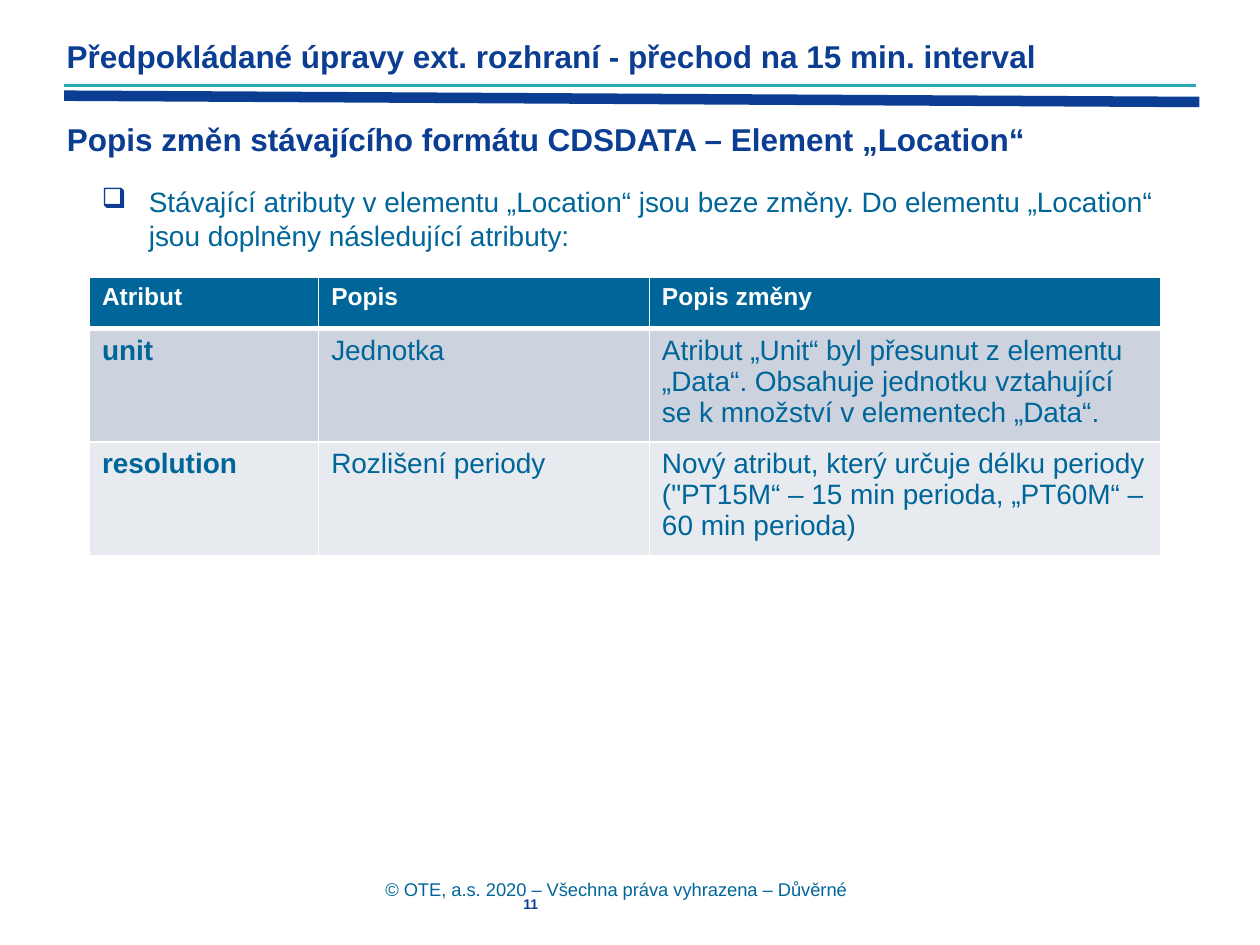
from lxml.etree import SubElement
from pptx import Presentation
from pptx.dml.color import RGBColor
from pptx.enum.shapes import MSO_CONNECTOR as CONNECTOR, MSO_SHAPE as SHAPE
from pptx.enum.text import MSO_ANCHOR as ANCHOR, PP_ALIGN as ALIGN
from pptx.oxml.ns import qn
from pptx.util import Pt

COLORS = {"navy": "0B3D92", "teal": "28ABB7", "blue": "006699", "white": "FFFFFF",
          "dark_band": "CCD3DE", "light_band": "E7EAEF"}
FONT = "Arial"

CHAPTER = "Předpokládané úpravy ext. rozhraní - přechod na 15 min. interval"
TITLE = "Popis změn stávajícího formátu CDSDATA – Element „Location“"
INTRO = ("Stávající atributy v elementu „Location“ jsou beze změny. "
         "Do elementu „Location“ jsou doplněny následující atributy:")
COPYRIGHT = "© OTE, a.s. 2020 – Všechna práva vyhrazena – Důvěrné"
PAGE_NUMBER = "11"
ATTRIBUTES = [
    ("Atribut", "Popis", "Popis změny"),
    ("unit", "Jednotka",
     "Atribut „Unit“ byl přesunut z elementu „Data“. Obsahuje jednotku "
     "vztahující se k množství v elementech „Data“."),
    ("resolution", "Rozlišení periody",
     "Nový atribut, který určuje délku periody "
     "(\"PT15M“ – 15 min perioda, „PT60M“ – 60 min perioda)"),
]
ROW_FILLS = ["blue", "dark_band", "light_band"]
COLUMN_WIDTHS = [131, 189, 292.5]
ROW_HEIGHTS = [29.5, 60.5, 60.5]

# Header rules: start x, start y, end x, end y, colour, line width
RULES = [(36.7, 54.7, 685.4, 58.3, "navy", 6),
         (36.7, 49, 683.3, 49, "teal", 2)]


def rgb(name):
    return RGBColor.from_string(COLORS[name])


def write(text_frame, text, size, color, bold=False, align=ALIGN.LEFT, anchor=ANCHOR.TOP):
    text_frame.word_wrap = True
    text_frame.vertical_anchor = anchor
    paragraph = text_frame.paragraphs[0]
    paragraph.alignment = align
    paragraph.space_before = Pt(0)
    run = paragraph.add_run()
    run.text = text
    run.font.name = FONT
    run.font.size = Pt(size)
    run.font.bold = bold
    run.font.color.rgb = rgb(color)
    return paragraph


def add_text(slide, box, *args, **kwargs):
    text_box = slide.shapes.add_textbox(*map(Pt, box))
    return write(text_box.text_frame, *args, **kwargs)


def add_rule(slide, x1, y1, x2, y2, color, width):
    rule = slide.shapes.add_connector(CONNECTOR.STRAIGHT, Pt(x1), Pt(y1), Pt(x2), Pt(y2))
    rule.line.color.rgb = rgb(color)
    rule.line.width = Pt(width)
    SubElement(rule._element.spPr, qn("a:effectLst"))


def add_bullet(paragraph, character, color, indent):
    properties = paragraph._p.get_or_add_pPr()
    properties.set("marL", str(Pt(indent)))
    properties.set("indent", str(-Pt(indent)))
    bullet_color = SubElement(properties, qn("a:buClr"))
    SubElement(bullet_color, qn("a:srgbClr"), val=COLORS[color])
    SubElement(properties, qn("a:buChar"), char=character)


def set_borders(cell, bottom_width):
    """Draw white borders; they have to come before the cell's fill."""
    properties = cell._tc.get_or_add_tcPr()
    widths = {"lnL": 1, "lnR": 1, "lnT": 1, "lnB": bottom_width}
    for side, width in widths.items():
        line = SubElement(properties, qn(f"a:{side}"), w=str(Pt(width)))
        fill = SubElement(line, qn("a:solidFill"))
        SubElement(fill, qn("a:srgbClr"), val=COLORS["white"])


def add_attribute_table(slide, left, top):
    frame = slide.shapes.add_table(len(ATTRIBUTES), len(COLUMN_WIDTHS), Pt(left), Pt(top),
                                   Pt(sum(COLUMN_WIDTHS)), Pt(sum(ROW_HEIGHTS)))
    table = frame.table
    table.horz_banding = False
    for column, width in zip(table.columns, COLUMN_WIDTHS):
        column.width = Pt(width)
    for i, texts in enumerate(ATTRIBUTES):
        table.rows[i].height = Pt(ROW_HEIGHTS[i])
        header = i == 0
        for j, text in enumerate(texts):
            cell = table.cell(i, j)
            set_borders(cell, 3 if header else 1)
            cell.fill.solid()
            cell.fill.fore_color.rgb = rgb(ROW_FILLS[i])
            write(cell.text_frame, text, 14 if header else 16,
                  "white" if header else "blue", bold=header or j == 0)


def add_page_number(slide):
    strip = slide.shapes.add_shape(SHAPE.RECTANGLE, Pt(38), Pt(508.3), Pt(651.6), Pt(16.6))
    strip.shadow.inherit = False
    strip.fill.solid()
    strip.fill.fore_color.rgb = rgb("white")
    strip.line.fill.background()
    strip.text_frame.margin_right = Pt(128)
    write(strip.text_frame, PAGE_NUMBER, 8, "navy", bold=True,
          align=ALIGN.CENTER, anchor=ANCHOR.MIDDLE)


def main():
    presentation = Presentation()
    presentation.slide_width, presentation.slide_height = Pt(720), Pt(540)
    slide = presentation.slides.add_slide(presentation.slide_layouts[5])

    for rule in RULES:
        add_rule(slide, *rule)
    add_page_number(slide)

    title = slide.shapes.title
    title.left, title.top, title.width, title.height = map(Pt, (31, 67.7, 581, 39.6))
    heading = write(title.text_frame, TITLE, 18, "navy", bold=True)
    chapter = add_text(slide, (31, 20.2, 581, 39.6), CHAPTER, 18, "navy", bold=True)
    for paragraph in (heading, chapter):
        paragraph.line_spacing = 0.9

    intro = add_text(slide, (51, 102, 645, 46), INTRO, 16, "blue")
    add_bullet(intro, "❑", "navy", 27)
    add_attribute_table(slide, 51.1, 158.4)
    add_text(slide, (51, 498.2, 602.6, 36), COPYRIGHT, 10.5, "blue", align=ALIGN.CENTER)

    presentation.save("out.pptx")


if __name__ == "__main__":
    main()
